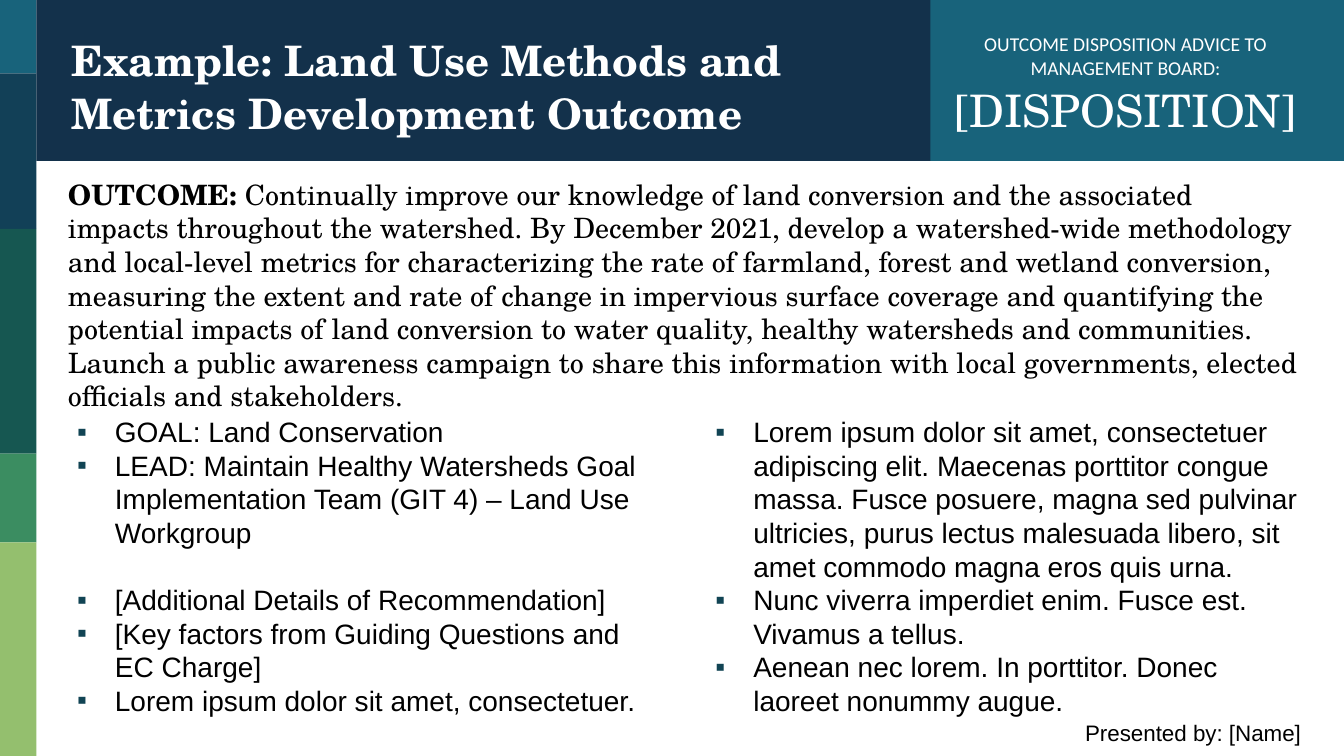
from dataclasses import dataclass

from pptx import Presentation
from pptx import util as u
from pptx.dml.color import RGBColor
from pptx.enum import shapes, text
from pptx.oxml import parse_xml
from pptx.oxml.ns import nsdecls


@dataclass(frozen=True)
class Theme:
    white: str = "FFFFFF"
    black: str = "000000"
    navy: str = "13314B"
    teal: str = "18637B"
    mark: str = "114454"
    stripe: tuple = ("18637B", "124057", "165751", "3B8D61", "94BF6E")
    serif: str = "TeX Gyre Schola"
    sans: str = "Arial"
    label: str = "Calibri"
    title: int = 30
    hero: int = 32
    body: int = 20
    foot: int = 16
    note: int = 14


class Deck:
    def __init__(self, theme):
        self.theme = theme
        self.file = Presentation()
        self.file.slide_width, self.file.slide_height = u.Pt(960), u.Pt(540)
        self.slide = self.file.slides.add_slide(self.file.slide_layouts[6])

    def rect(self, x, y, w, h, fill):
        box = self.slide.shapes.add_shape(
            shapes.MSO_SHAPE.RECTANGLE, *map(u.Pt, (x, y, w, h)))
        box.shadow.inherit = False
        box.fill.solid()
        box.fill.fore_color.rgb = RGBColor.from_string(fill)
        box.line.fill.background()

    def frame(self, x, y, w, h, side=7.2, top=3.6):
        frame = self.slide.shapes.add_textbox(
            *map(u.Pt, (x, y, w, h))).text_frame
        frame.word_wrap = True
        frame.margin_left = frame.margin_right = u.Pt(side)
        frame.margin_top = frame.margin_bottom = u.Pt(top)
        return frame

    def run(self, para, words, font, size, color, bold=False):
        run = para.add_run()
        run.text = words
        run.font.name = font
        run.font.size = u.Pt(size)
        run.font.bold = bold
        run.font.color.rgb = RGBColor.from_string(color)

    def head(self, x, y, w, h, runs, align):
        frame = self.frame(x, y, w, h, 9.6, 4.8)
        frame.vertical_anchor = text.MSO_ANCHOR.MIDDLE
        para = frame.paragraphs[0]
        para.alignment = align
        para.line_spacing = 1.05
        for words, font, size, bold in runs:
            self.run(para, words, font, size, self.theme.white, bold)

    def prose(self, x, y, w, h, runs, font, size, align):
        para = self.frame(x, y, w, h).paragraphs[0]
        para.alignment = align
        for words, bold in runs:
            self.run(para, words, font, size, self.theme.black, bold)

    def bullets(self, x, y, w, h, items):
        look = self.theme
        frame = self.frame(x, y, w, h, 7.2, 7.2)
        for i, (words, gap) in enumerate(items):
            para = frame.add_paragraph() if i else frame.paragraphs[0]
            para.line_spacing = u.Pt(24)
            para.space_after = u.Pt(gap)
            props = para._p.get_or_add_pPr()
            props.set("marL", str(u.Pt(27)))
            props.set("indent", str(u.Pt(-27)))
            for tag in (f'<a:buClr {nsdecls("a")}><a:srgbClr val="{look.mark}"/></a:buClr>',
                        f'<a:buFont {nsdecls("a")} typeface="{look.sans}"/>',
                        f'<a:buChar {nsdecls("a")} char="▪"/>'):
                props.append(parse_xml(tag))
            self.run(para, words, look.sans, look.body, look.black)


def main():
    look = Theme()
    deck = Deck(look)
    left, mid, right = (text.PP_ALIGN.LEFT, text.PP_ALIGN.CENTER,
                        text.PP_ALIGN.RIGHT)

    edges = (0, 52.5, 163.5, 324, 387.5, 540)
    for top, end, fill in zip(edges, edges[1:], look.stripe):
        deck.rect(0, top, 26, end - top, fill)

    deck.rect(26.5, 114.5, 933.5, 173.5, look.white)
    deck.rect(26, 0, 912, 115, look.navy)
    deck.head(41.5, 15, 612, 91, [
        ("Example: Land Use Methods and Metrics Development Outcome",
         look.serif, look.title, True)], left)
    deck.rect(664.5, 0, 295.5, 115, look.teal)
    deck.head(671.5, 17, 265, 85, [
        ("OUTCOME DISPOSITION ADVICE TO MANAGEMENT BOARD: ",
         look.label, look.note, False),
        ("[DISPOSITION]", look.serif, look.hero, False)], mid)

    deck.prose(41.5, 123, 895, 173.5, [
        ("OUTCOME: ", True),
        ("Continually improve our knowledge of land conversion and the "
         "associated impacts throughout the watershed. By December 2021, "
         "develop a watershed-wide methodology and local-level metrics for "
         "characterizing the rate of farmland, forest and wetland conversion, "
         "measuring the extent and rate of change in impervious surface "
         "coverage and quantifying the potential impacts of land conversion "
         "to water quality, healthy watersheds and communities. Launch a "
         "public awareness campaign to share this information with local "
         "governments, elected officials and stakeholders.", False)],
        look.serif, look.body, left)
    deck.prose(519, 510, 417.5, 26.5, [("Presented by: [Name]", False)],
               look.sans, look.foot, right)

    goals = [
        ("GOAL: Land Conservation", 0),
        ("LEAD: Maintain Healthy Watersheds Goal Implementation Team (GIT 4) "
         "– Land Use Workgroup", 24),
        ("[Additional Details of Recommendation]", 0),
        ("[Key factors from Guiding Questions and EC Charge]", 0),
        ("Lorem ipsum dolor sit amet, consectetuer.", 0)]
    facts = [
        ("Lorem ipsum dolor sit amet, consectetuer adipiscing elit. Maecenas "
         "porttitor congue massa. Fusce posuere, magna sed pulvinar ultricies, "
         "purus lectus malesuada libero, sit amet commodo magna eros quis "
         "urna.", 0),
        ("Nunc viverra imperdiet enim. Fusce est. Vivamus a tellus.", 0),
        ("Aenean nec lorem. In porttitor. Donec laoreet nonummy augue.", 0)]
    for x, items in ((48, goals), (504, facts)):
        deck.bullets(x, 289, 432, 227, items)

    deck.file.save("out.pptx")


if __name__ == "__main__":
    main()
